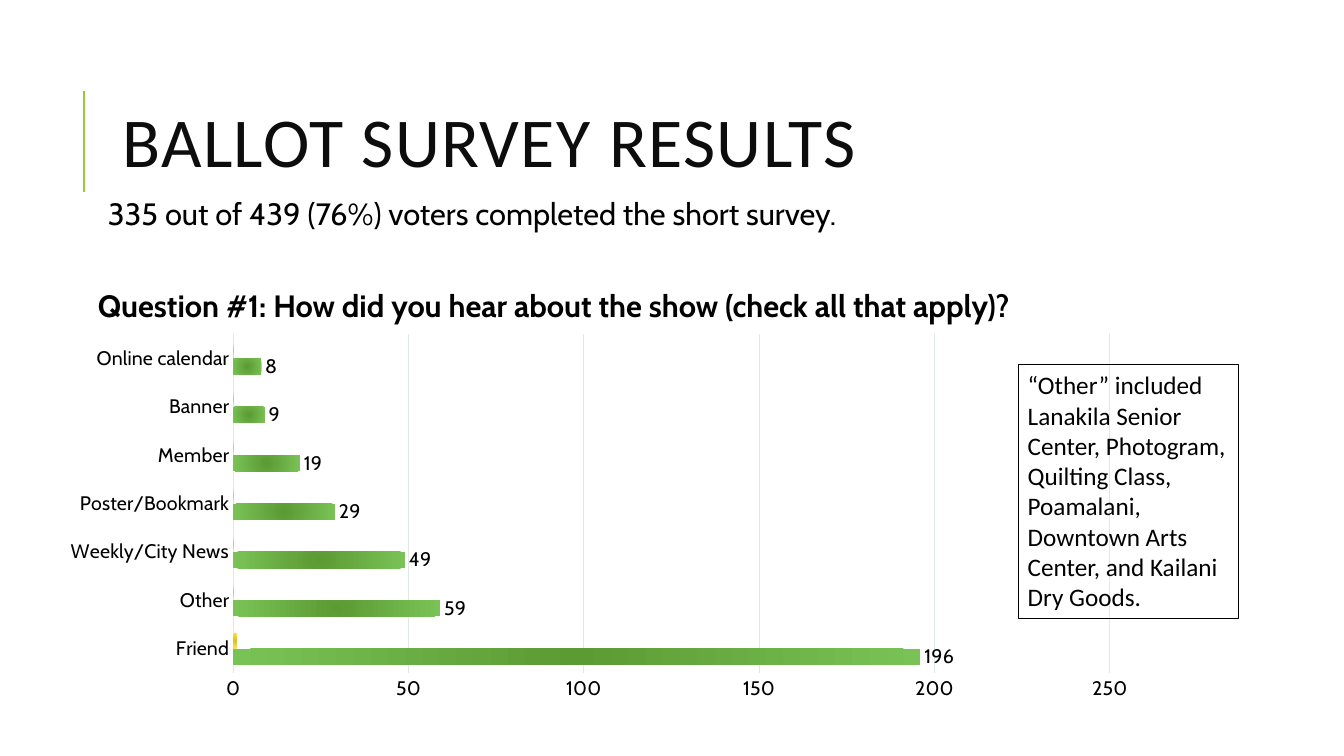
from pptx import Presentation
from pptx.chart.data import CategoryChartData
from pptx.dml.color import RGBColor
from pptx.enum.chart import XL_CHART_TYPE as ChartType
from pptx.enum.chart import XL_LABEL_POSITION as LabelPosition
from pptx.enum.chart import XL_TICK_MARK as TickMark
from pptx.enum.shapes import MSO_CONNECTOR as Connector
from pptx.enum.text import MSO_ANCHOR as Anchor
from pptx.enum.text import MSO_AUTO_SIZE as AutoSize
from pptx.oxml import parse_xml
from pptx.oxml.ns import nsdecls, qn
from pptx.util import Cm, Pt

COLORS = {
    "accent": "99CB38", "title": "0D0D0D", "text": "000000", "grid": "E1E9E5",
    "green_dark": "5C9A33", "green_light": "79C356",
    "yellow_dark": "D6C222", "yellow_light": "FFE54B",
}
ANSWERS = {
    "Friend": 196, "Other": 59, "Weekly/City News": 49, "Poster/Bookmark": 29,
    "Member": 19, "Banner": 9, "Online calendar": 8,
}
SHARES = [1, 0, 0, 0, 0, 0, 0]


def rgb(name):
    return RGBColor.from_string(COLORS[name])


def add_box(slide, left, top, width, height, inset=None, anchor=Anchor.TOP):
    box = slide.shapes.add_textbox(Cm(left), Cm(top), Cm(width), Cm(height))
    frame = box.text_frame
    frame.word_wrap = True
    frame.vertical_anchor = anchor
    if inset is not None:
        frame.margin_left = frame.margin_right = Cm(inset)
        frame.margin_top = frame.margin_bottom = Cm(inset)
    return box


def write(paragraph, text, font="Cabin", size=22, color="text", bold=False,
          line_spacing=None, before=None, after=None, indent=0, tracking=0):
    if indent:
        paragraph._p.get_or_add_pPr().set("marL", str(Cm(indent)))
    if line_spacing:
        paragraph.line_spacing = line_spacing
    if before is not None:
        paragraph.space_before = Pt(before)
    if after is not None:
        paragraph.space_after = Pt(after)
    run = paragraph.add_run()
    run.text = text
    style_font(run.font, size, color, font)
    run.font.bold = bold
    if tracking:
        run.font._element.set("spc", str(tracking * 100))


def style_font(target, size=14, color="text", font="Cabin"):
    target.name = font
    target.size = Pt(size)
    target.color.rgb = rgb(color)


def style_line(line, color, width):
    line.color.rgb = rgb(color)
    line.width = Pt(width)


def add_rule(slide, x, top, bottom):
    rule = slide.shapes.add_connector(Connector.STRAIGHT, Cm(x), Cm(bottom), Cm(x), Cm(top))
    style_line(rule.line, "accent", 1.5)
    rule._element.spPr.append(parse_xml(f"<a:effectLst {nsdecls('a')}/>"))


def fill_radial(series, inner, outer):
    stops = "".join(
        f'<a:gs pos="{position}"><a:srgbClr val="{COLORS[name]}"/></a:gs>'
        for position, name in ((0, inner), (100000, outer)))
    series._element.get_or_add_spPr().append(parse_xml(
        f"<a:gradFill {nsdecls('a')} rotWithShape=\"1\"><a:gsLst>{stops}</a:gsLst>"
        '<a:path path="circle"><a:fillToRect l="100000" t="100000" r="100000" b="100000"/>'
        "</a:path></a:gradFill>"))


def set_inner_layout(chart, x, y, w, h):
    plot_area = chart._chartSpace.chart.plotArea
    for old in plot_area.findall(qn("c:layout")):
        plot_area.remove(old)
    sizes = "".join(f'<c:{key} val="{value}"/>' for key, value in
                    (("x", x), ("y", y), ("w", w), ("h", h)))
    plot_area.insert(0, parse_xml(
        f"<c:layout {nsdecls('c')}><c:manualLayout>"
        '<c:layoutTarget val="inner"/><c:xMode val="edge"/><c:yMode val="edge"/>'
        f"{sizes}</c:manualLayout></c:layout>"))


def add_survey_chart(slide, left, top, width, height):
    data = CategoryChartData()
    data.categories = list(ANSWERS)
    data.add_series("Series 1", list(ANSWERS.values()))
    data.add_series("Series 2", SHARES)
    chart = slide.shapes.add_chart(ChartType.BAR_CLUSTERED, Cm(left), Cm(top),
                                   Cm(width), Cm(height), data).chart
    chart.has_title = False
    chart.has_legend = False
    style_font(chart.font)
    set_inner_layout(chart, 0.15, 0.08, 0.82, 0.8)

    # Bars and their values
    bars = chart.plots[0]
    bars.gap_width = 100
    bars.overlap = 0
    bars.vary_by_categories = False
    counts, shares = bars.series
    fill_radial(counts, "green_dark", "green_light")
    fill_radial(shares, "yellow_dark", "yellow_light")
    labels = counts.data_labels
    labels.show_value = True
    labels.position = LabelPosition.OUTSIDE_END
    style_font(labels.font)

    # Axes
    answers, votes = chart.category_axis, chart.value_axis
    for axis in (answers, votes):
        axis.major_tick_mark = axis.minor_tick_mark = TickMark.NONE
        style_font(axis.tick_labels.font)
    style_line(answers.format.line, "grid", 0.75)
    votes.minimum_scale, votes.maximum_scale, votes.major_unit = 0, 250, 50
    votes.format.line.fill.background()
    style_line(votes.major_gridlines.format.line, "grid", 0.75)


def main():
    deck = Presentation()
    deck.slide_width, deck.slide_height = Cm(33.87), Cm(19.05)
    slide = deck.slides.add_slide(deck.slide_layouts[6])

    # Heading
    add_rule(slide, 2.11, 2.29, 4.83)
    title = add_box(slide, 2.84, 1.63, 27, 4.17, anchor=Anchor.MIDDLE)
    write(title.text_frame.paragraphs[0], "BALLOT SURVEY RESULTS", font="Calibri",
          size=50, color="title", line_spacing=0.8, tracking=1)

    # Turnout and question
    intro = add_box(slide, 2.34, 4.88, 29.21, 4.45, inset=0.13).text_frame
    write(intro.paragraphs[0], "335 out of 439 (76%) voters completed the short survey.",
          line_spacing=0.9, after=2, indent=0.25)
    write(intro.add_paragraph(),
          "Question #1: How did you hear about the show (check all that apply)?",
          bold=True, line_spacing=0.9, before=40, after=2)

    # Answers
    add_survey_chart(slide, 1.78, 7.57, 27, 10.67)

    # Note on the other answers
    note = add_box(slide, 25.65, 9.19, 5.56, 6.4)
    style_line(note.line, "text", 0.25)
    note.text_frame.auto_size = AutoSize.SHAPE_TO_FIT_TEXT
    write(note.text_frame.paragraphs[0],
          "“Other” included Lanakila Senior Center, Photogram, Quilting Class, "
          "Poamalani, Downtown Arts Center, and Kailani Dry Goods.",
          font="Calibri", size=18)

    deck.save("out.pptx")


if __name__ == "__main__":
    main()
